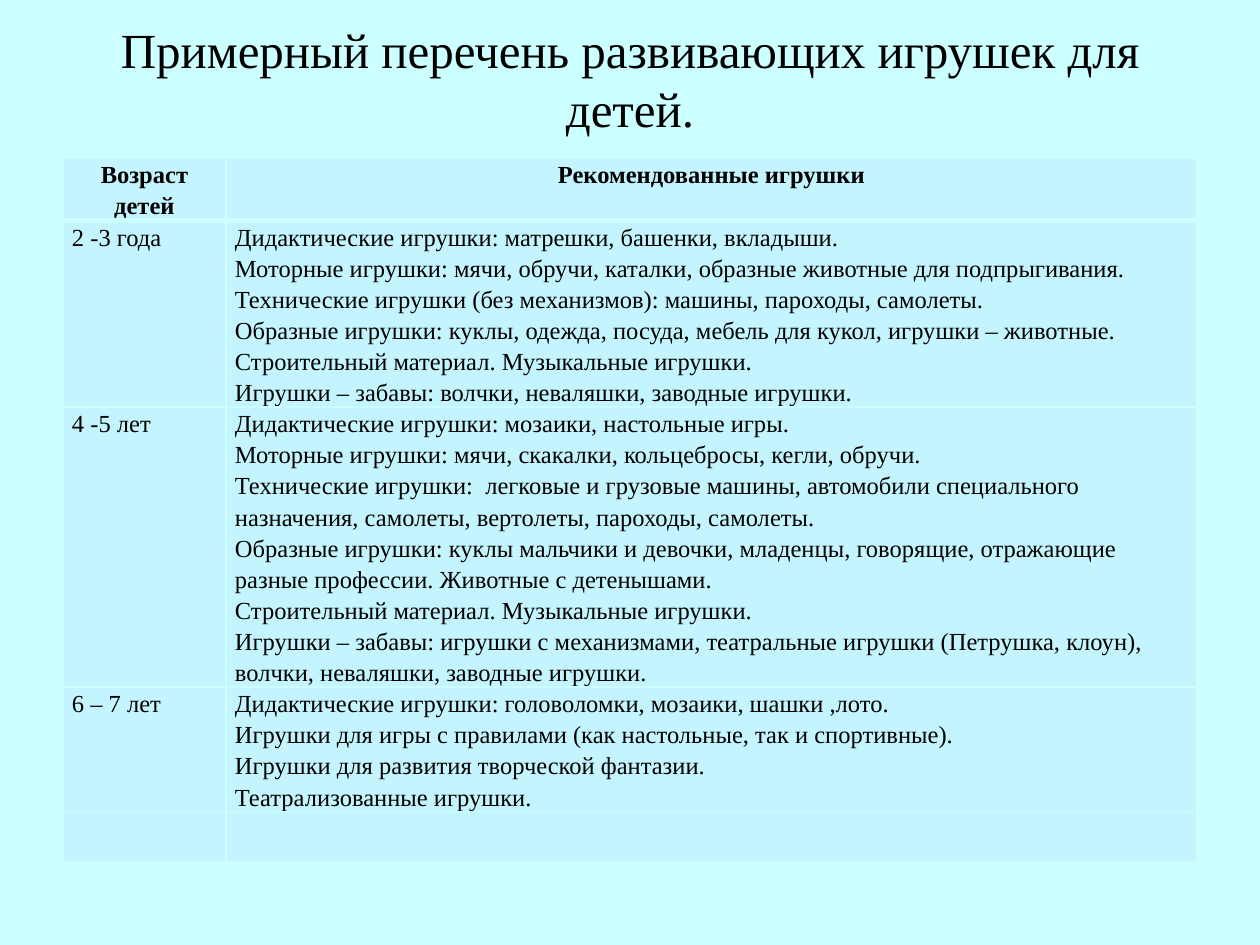
from lxml import etree
from pptx import Presentation
from pptx import util as u
from pptx.dml.color import RGBColor
from pptx.enum import text
from pptx.oxml.ns import qn

PX = 914400 / 126
COLORS = {"background": "CCFFFF", "cell": "C4F4FE", "ink": "000000"}
FONT = "Times New Roman"

TITLE = "Примерный перечень развивающих игрушек для детей."
HEADERS = ["Возраст детей", "Рекомендованные игрушки"]
TOYS_BY_AGE = [
    ("2 -3 года", [
        "Дидактические игрушки: матрешки, башенки, вкладыши.",
        "Моторные игрушки: мячи, обручи, каталки, образные животные для подпрыгивания.",
        "Технические игрушки (без механизмов): машины, пароходы, самолеты.",
        "Образные игрушки: куклы, одежда, посуда, мебель для кукол, игрушки – животные.",
        "Строительный материал. Музыкальные игрушки.",
        "Игрушки – забавы: волчки, неваляшки, заводные игрушки.",
    ]),
    ("4 -5 лет", [
        "Дидактические игрушки: мозаики, настольные игры.",
        "Моторные игрушки: мячи, скакалки, кольцебросы, кегли, обручи.",
        "Технические игрушки:  легковые и грузовые машины, автомобили специального "
        "назначения, самолеты, вертолеты, пароходы, самолеты.",
        "Образные игрушки: куклы мальчики и девочки, младенцы, говорящие, отражающие "
        "разные профессии. Животные с детенышами.",
        "Строительный материал. Музыкальные игрушки.",
        "Игрушки – забавы: игрушки с механизмами, театральные игрушки (Петрушка, клоун), "
        "волчки, неваляшки, заводные игрушки.",
    ]),
    ("6 – 7 лет", [
        "Дидактические игрушки: головоломки, мозаики, шашки ,лото.",
        "Игрушки для игры с правилами (как настольные, так и спортивные).",
        "Игрушки для развития творческой фантазии.",
        "Театрализованные игрушки.",
    ]),
]


def px(n):
    return u.Emu(round(n * PX))


def rgb(name):
    return RGBColor.from_string(COLORS[name])


def write(tf, lines, size=14, bold=False, align=text.PP_ALIGN.LEFT, spacing=u.Pt(17.77)):
    for i, line in enumerate(lines):
        p = tf.paragraphs[0] if i == 0 else tf.add_paragraph()
        p.alignment = align
        p.line_spacing = spacing
        r = p.add_run()
        r.text = line
        r.font.name = FONT
        r.font.size = u.Pt(size)
        r.font.bold = bold
        r.font.color.rgb = rgb("ink")


class Deck:
    def __init__(self, width, height):
        self.prs = Presentation()
        self.prs.slide_width, self.prs.slide_height = px(width), px(height)
        self.s = self.prs.slides.add_slide(self.prs.slide_layouts[6])
        fill = self.s.background.fill
        fill.solid()
        fill.fore_color.rgb = rgb("background")

    def title(self, line, x, y, w, h, bottom):
        tf = self.s.shapes.add_textbox(px(x), px(y), px(w), px(h)).text_frame
        tf.word_wrap = True
        tf.vertical_anchor = text.MSO_ANCHOR.MIDDLE
        tf.margin_top, tf.margin_bottom = 0, px(bottom)
        write(tf, [line], size=28, align=text.PP_ALIGN.CENTER, spacing=1.0)

    def table(self, rows, x, y, widths, row_height):
        tbl = self.s.shapes.add_table(len(rows), len(widths), px(x), px(y),
                                      px(sum(widths)), px(row_height * len(rows))).table
        for column, width in zip(tbl.columns, widths):
            column.width = px(width)
        for i, row in enumerate(rows):
            for j, lines in enumerate(row):
                self.cell(tbl.cell(i, j), lines, header=i == 0, below_header=i == 1)
        return tbl

    def cell(self, cell, lines, header, below_header):
        cell.fill.solid()
        cell.fill.fore_color.rgb = rgb("cell")
        if lines:
            cell.margin_left = cell.margin_right = px(9)
            cell.margin_top = cell.margin_bottom = 0
            align = text.PP_ALIGN.CENTER if header else text.PP_ALIGN.LEFT
            write(cell.text_frame, lines, bold=header, align=align)
        self.border(cell, L=1, R=1, T=3 if below_header else 1, B=3 if header else 1)

    def border(self, cell, **sides):
        props = cell._tc.get_or_add_tcPr()
        for i, (side, points) in enumerate(sides.items()):
            ln = etree.Element(qn("a:ln" + side), w=str(u.Pt(points)))
            fill = etree.SubElement(ln, qn("a:solidFill"))
            etree.SubElement(fill, qn("a:srgbClr"), val=COLORS["background"])
            props.insert(i, ln)


def main():
    deck = Deck(1260, 945)
    deck.title(TITLE, 63, 38, 1134, 140, bottom=59)
    rows = [[[h] for h in HEADERS]]
    rows += [[[age], toys] for age, toys in TOYS_BY_AGE]
    rows.append([[], []])
    deck.table(rows, 63, 158, [163, 971], 50)
    deck.prs.save("out.pptx")


if __name__ == "__main__":
    main()
